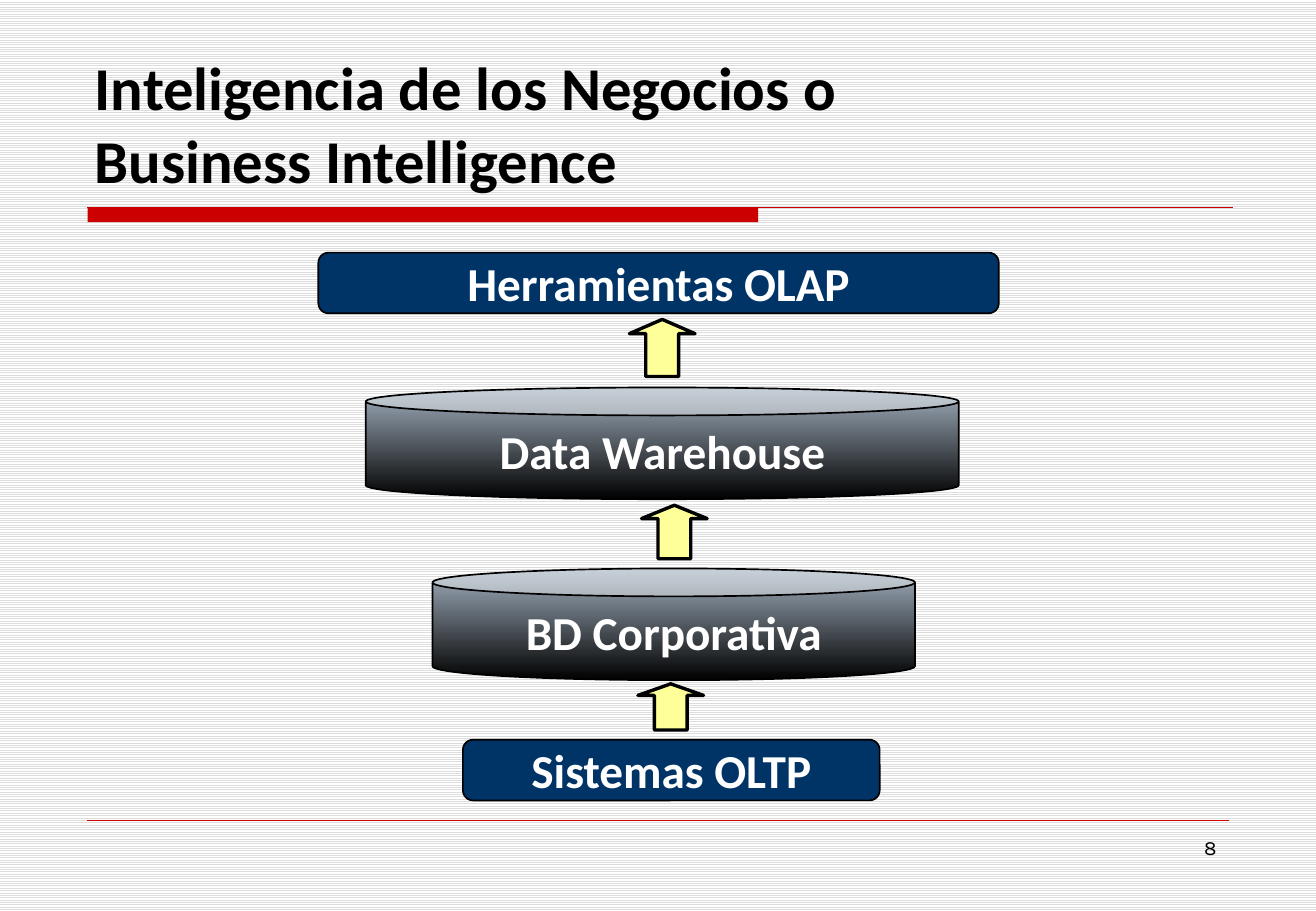
import dataclasses

import pptx
import pptx.dml.color
import pptx.enum.dml
import pptx.enum.shapes
import pptx.enum.text
import pptx.oxml.xmlchemy
import pptx.util
from pptx.util import Inches

SHAPE = pptx.enum.shapes.MSO_SHAPE
ALIGN = pptx.enum.text.PP_ALIGN
ANCHOR = pptx.enum.text.MSO_ANCHOR


@dataclasses.dataclass(frozen=True)
class Theme:
    black: str = "000000"
    white: str = "FFFFFF"
    stripe: str = "DDDDDD"
    accent: str = "CC0000"
    navy: str = "003366"
    steel: str = "A3B2C1"
    arrow: str = "FFFF99"
    font: str = "Calibri"
    number_font: str = "Karla"
    title_size: int = 36
    label_size: int = 28
    number_size: int = 12


def rgb(value):
    return pptx.dml.color.RGBColor.from_string(value)


def write(frame, text, *, font, size, color, bold=False, align=ALIGN.LEFT):
    """Fill a text frame, one paragraph per line of text."""
    frame.text = text
    for para in frame.paragraphs:
        para.alignment = align
        for span in para.runs:
            span.font.name = font
            span.font.size = pptx.util.Pt(size)
            span.font.bold = bold
            span.font.color.rgb = rgb(color)


class SlideBuilder:
    def __init__(self, page, theme):
        self.page = page
        self.theme = theme

    def background(self):
        fill = self.page.background.fill
        fill.patterned()
        fill.pattern = pptx.enum.dml.MSO_PATTERN.LIGHT_HORIZONTAL
        fill.fore_color.rgb = rgb(self.theme.stripe)
        fill.back_color.rgb = rgb(self.theme.white)

    def title(self, text, left, top, width, height):
        box = self.page.shapes.title
        box.left, box.top = Inches(left), Inches(top)
        box.width, box.height = Inches(width), Inches(height)
        frame = box.text_frame
        frame.vertical_anchor = ANCHOR.BOTTOM
        frame.auto_size = pptx.enum.text.MSO_AUTO_SIZE.SHAPE_TO_FIT_TEXT
        write(frame, text, font=self.theme.font, size=self.theme.title_size,
              color=self.theme.black, bold=True)

    def rule(self, left, right, top, weight):
        line = self.page.shapes.add_connector(
            pptx.enum.shapes.MSO_CONNECTOR.STRAIGHT,
            Inches(left), Inches(top), Inches(right), Inches(top))
        line.line.color.rgb = rgb(self.theme.accent)
        line.line.width = pptx.util.Pt(weight)
        properties = line._element.spPr
        properties.append(properties.makeelement(
            pptx.oxml.ns.qn("a:effectLst"), {}))

    def shape(self, kind, left, top, width, height, fill, weight=0, adjust=()):
        box = self.page.shapes.add_shape(
            kind, Inches(left), Inches(top), Inches(width), Inches(height))
        box.shadow.inherit = False
        for index, value in enumerate(adjust):
            box.adjustments[index] = value
        box.fill.solid()
        box.fill.fore_color.rgb = rgb(fill)
        if weight:
            box.line.color.rgb = rgb(self.theme.black)
            box.line.width = pptx.util.Pt(weight)
        else:
            box.line.fill.background()
        return box

    def label(self, box, text):
        frame = box.text_frame
        frame.word_wrap = False
        frame.vertical_anchor = ANCHOR.MIDDLE
        write(frame, text, font=self.theme.font, size=self.theme.label_size,
              color=self.theme.white, bold=True, align=ALIGN.CENTER)

    def tool(self, text, left, top, width):
        box = self.shape(SHAPE.ROUNDED_RECTANGLE, left, top, width, 0.5,
                         self.theme.navy, 1, [0.167])
        self.label(box, text)

    def database(self, text, left, top, width):
        box = self.shape(SHAPE.CAN, left, top, width, 0.92,
                         self.theme.steel, 1, [0.25])
        box.fill.gradient()
        box.fill.gradient_angle = 270
        colors = (self.theme.steel, self.theme.black)
        for position, (stop, color) in enumerate(
                zip(box.fill.gradient_stops, colors)):
            stop.position = position
            stop.color.rgb = rgb(color)
        self.label(box, text)

    def up_arrow(self, left, top, height):
        self.shape(SHAPE.UP_ARROW, left, top, 0.54, height,
                   self.theme.arrow, 2, [0.5, 0.25])

    def page_number(self, text, left, top, width, height):
        box = self.page.shapes.add_textbox(
            Inches(left), Inches(top), Inches(width), Inches(height))
        box.text_frame.word_wrap = True
        write(box.text_frame, text, font=self.theme.number_font,
              size=self.theme.number_size, color=self.theme.black,
              align=ALIGN.RIGHT)


def main():
    deck = pptx.Presentation()
    deck.slide_width, deck.slide_height = Inches(10.83), Inches(7.5)
    theme = Theme()
    builder = SlideBuilder(deck.slides.add_slide(deck.slide_layouts[5]), theme)

    # Frame of the page
    builder.background()
    builder.shape(SHAPE.RECTANGLE, 0.72, 1.71, 5.52, 0.12, theme.accent)
    builder.rule(0.72, 10.15, 1.71, 0.75)
    builder.rule(0.72, 10.11, 6.75, 0.25)
    builder.page_number("8", 7.76, 6.83, 2.35, 0.52)
    builder.title("Inteligencia de los Negocios o\nBusiness Intelligence",
                  0.68, 0.33, 9.48, 1.33)

    # Layers, from the source systems up to the tools
    builder.tool("Sistemas OLTP", 3.81, 6.09, 3.43)
    builder.database("BD Corporativa", 3.56, 4.68, 3.97)
    builder.database("Data Warehouse", 3.01, 3.19, 4.88)
    builder.tool("Herramientas OLAP", 2.62, 2.08, 5.6)

    # Arrows between the layers
    for left, top, height in ((5.18, 2.63, 0.47), (5.28, 4.16, 0.44),
                              (5.25, 5.63, 0.38)):
        builder.up_arrow(left, top, height)

    deck.save("out.pptx")


if __name__ == "__main__":
    main()
